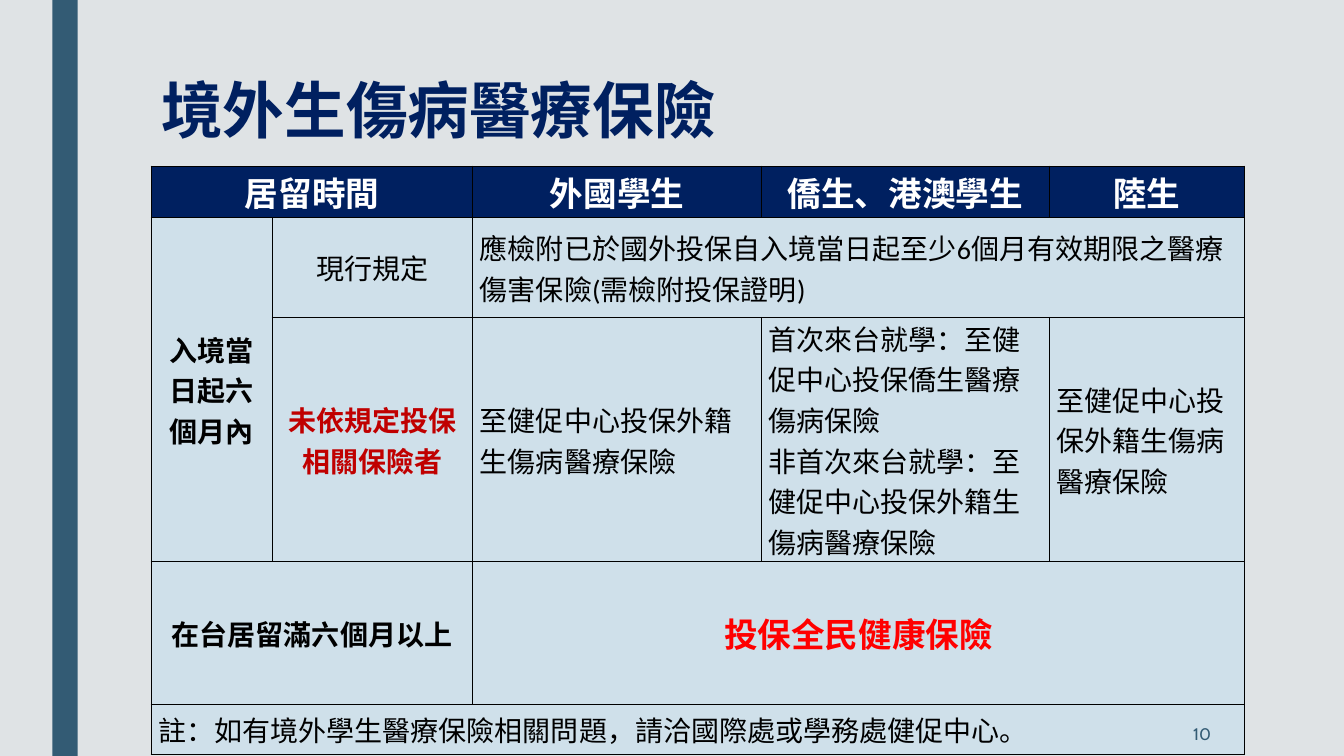
from lxml import etree
from pptx import Presentation
from pptx.dml.color import RGBColor
from pptx.enum.shapes import MSO_SHAPE
from pptx.enum.text import MSO_ANCHOR, MSO_AUTO_SIZE, PP_ALIGN
from pptx.oxml import parse_xml
from pptx.oxml.ns import nsdecls
from pptx.util import Inches, Pt

NAVY, TEAL, PALE, BACKGROUND = "002060", "335B74", "CFE0EA", "DFE3E5"
BLACK, WHITE, DARK_RED, RED = "000000", "FFFFFF", "C00000", "FF0000"

TITLE = "境外生傷病醫療保險"
PAGE_NUMBER = "10"
COLUMN_WIDTHS = [1.2, 1.99, 2.86, 2.86, 1.93]
ROW_HEIGHTS = [0.51, 0.99, 2.13, 1.42, 0.5]

# style: size, colour, bold, alignment, fill
STYLES = {
    "header": (24, WHITE, True, PP_ALIGN.CENTER, NAVY),
    "period": (20, BLACK, True, PP_ALIGN.CENTER, PALE),
    "case": (20, BLACK, False, PP_ALIGN.CENTER, PALE),
    "warning": (20, DARK_RED, True, PP_ALIGN.CENTER, PALE),
    "body": (20, BLACK, False, PP_ALIGN.LEFT, PALE),
    "key": (24, RED, True, PP_ALIGN.CENTER, PALE),
}

# row, column, rows spanned, columns spanned, style, text
CELLS = [
    (0, 0, 1, 2, "header", "居留時間"),
    (0, 2, 1, 1, "header", "外國學生"),
    (0, 3, 1, 1, "header", "僑生、港澳學生"),
    (0, 4, 1, 1, "header", "陸生"),
    (1, 0, 2, 1, "period", "入境當日起六個月內"),
    (1, 1, 1, 1, "case", "現行規定"),
    (1, 2, 1, 3, "body", "應檢附已於國外投保自入境當日起至少6個月有效期限之醫療傷害保險(需檢附投保證明)"),
    (2, 1, 1, 1, "warning", "未依規定投保相關保險者"),
    (2, 2, 1, 1, "body", "至健促中心投保外籍生傷病醫療保險"),
    (2, 3, 1, 1, "body", "首次來台就學：至健促中心投保僑生醫療傷病保險\n"
                         "非首次來台就學：至健促中心投保外籍生傷病醫療保險"),
    (2, 4, 1, 1, "body", "至健促中心投保外籍生傷病醫療保險"),
    (3, 0, 1, 2, "period", "在台居留滿六個月以上"),
    (3, 2, 1, 3, "key", "投保全民健康保險"),
    (4, 0, 1, 5, "body", "註：如有境外學生醫療保險相關問題，請洽國際處或學務處健促中心。"),
]


def paint(fill, colour):
    fill.solid()
    fill.fore_color.rgb = RGBColor.from_string(colour)


def format_text(frame, font_name, size, colour, bold, alignment):
    for paragraph in frame.paragraphs:
        paragraph.alignment = alignment
        font = paragraph.font
        font.name, font.size, font.bold = font_name, Pt(size), bold
        font.color.rgb = RGBColor.from_string(colour)


def add_borders(cell):
    """Draw a 1 pt black line on all four sides; lines must precede the fill."""
    properties = cell._tc.get_or_add_tcPr()
    for index, side in enumerate(("lnL", "lnR", "lnT", "lnB")):
        line = parse_xml(f'<a:{side} {nsdecls("a")} w="{Pt(1)}"><a:solidFill>'
                         f'<a:srgbClr val="{BLACK}"/></a:solidFill></a:{side}>')
        properties.insert(index, line)


def add_insurance_table(slide):
    frame = slide.shapes.add_table(
        len(ROW_HEIGHTS), len(COLUMN_WIDTHS), Inches(1.5), Inches(1.65),
        Inches(sum(COLUMN_WIDTHS)), Inches(sum(ROW_HEIGHTS)))
    table = frame.table
    table.first_row = table.horz_banding = False
    for column, width in zip(table.columns, COLUMN_WIDTHS):
        column.width = Inches(width)
    for row, height in zip(table.rows, ROW_HEIGHTS):
        row.height = Inches(height)
    for cell in table.iter_cells():
        paint(cell.fill, PALE)
        add_borders(cell)

    for row, column, row_span, column_span, style, text in CELLS:
        size, colour, bold, alignment, fill = STYLES[style]
        cell = table.cell(row, column)
        if row_span * column_span > 1:
            cell.merge(table.cell(row + row_span - 1, column + column_span - 1))
        cell.text = text
        cell.vertical_anchor = MSO_ANCHOR.MIDDLE
        cell.margin_left = cell.margin_right = Inches(0.07)
        cell.margin_top = cell.margin_bottom = 0
        paint(cell.fill, fill)
        format_text(cell.text_frame, "Calibri", size, colour, bold, alignment)


def main():
    presentation = Presentation()
    presentation.slide_width, presentation.slide_height = Inches(13.33), Inches(7.5)
    slide = presentation.slides.add_slide(presentation.slide_layouts[5])
    paint(slide.background.fill, BACKGROUND)

    side_bar = slide.shapes.add_shape(
        MSO_SHAPE.RECTANGLE, Inches(0.52), 0, Inches(0.25), Inches(7.5))
    side_bar.shadow.inherit = False
    paint(side_bar.fill, TEAL)
    side_bar.line.fill.background()

    title = slide.shapes.title
    title.left, title.top = Inches(1.5), Inches(0.75)
    title.width, title.height = Inches(10.5), Inches(1.62)
    title.text = TITLE
    title.text_frame.auto_size = MSO_AUTO_SIZE.NONE
    title.text_frame.vertical_anchor = MSO_ANCHOR.TOP
    title.text_frame.paragraphs[0].line_spacing = 0.89
    format_text(title.text_frame, "Cabin", 44, NAVY, True, PP_ALIGN.LEFT)

    add_insurance_table(slide)

    page_box = slide.shapes.add_textbox(
        Inches(10.36), Inches(7.06), Inches(1.75), Inches(0.44))
    page_box.text_frame.text = PAGE_NUMBER
    page_box.text_frame.word_wrap = True
    page_box.text_frame.vertical_anchor = MSO_ANCHOR.MIDDLE
    format_text(page_box.text_frame, "Cabin", 12, TEAL, False, PP_ALIGN.RIGHT)

    presentation.save("out.pptx")


if __name__ == "__main__":
    main()
